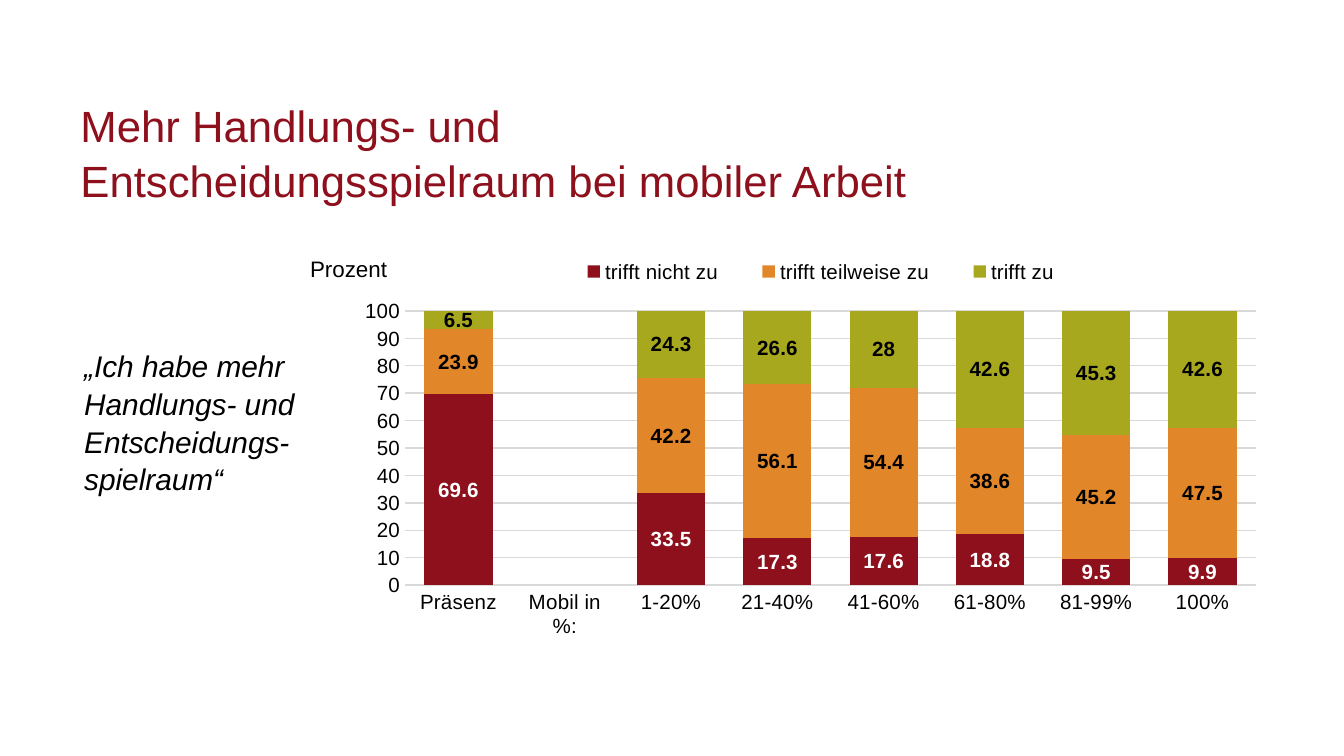
from dataclasses import dataclass

from lxml import etree
from pptx import Presentation
from pptx.chart.data import CategoryChartData
from pptx.dml.color import RGBColor
from pptx.enum.chart import XL_CHART_TYPE, XL_LABEL_POSITION, XL_LEGEND_POSITION, XL_TICK_MARK
from pptx.enum.text import MSO_ANCHOR
from pptx.oxml.ns import qn
from pptx.util import Pt

STACKED = XL_CHART_TYPE.COLUMN_STACKED
CENTER = XL_LABEL_POSITION.CENTER
BOTTOM = XL_LEGEND_POSITION.BOTTOM
NO_TICK = XL_TICK_MARK.NONE
TOP = MSO_ANCHOR.TOP

FONT = "Arial"
CRIMSON = RGBColor(0x8E, 0x10, 0x1C)
ORANGE = RGBColor(0xE2, 0x86, 0x2A)
OLIVE = RGBColor(0xA8, 0xA8, 0x1E)
BLACK = RGBColor(0, 0, 0)
WHITE = RGBColor(0xFF, 0xFF, 0xFF)
GRID_GRAY = RGBColor(0xD9, 0xD9, 0xD9)

CATEGORIES = ["Präsenz", "Mobil in %:", "1-20%", "21-40%", "41-60%", "61-80%", "81-99%", "100%"]


@dataclass
class Label:
    text: str
    left: float
    top: float
    width: float
    height: float
    size: float
    color: RGBColor = BLACK
    italic: bool = False
    line_spacing: float = 1.0


@dataclass
class Answer:
    name: str
    values: list[float | None]
    color: RGBColor
    label_color: RGBColor


LABELS = [
    Label("Mehr Handlungs- und Entscheidungsspielraum bei mobiler Arbeit",
          36, 48.24, 481, 75.6, 23.4, CRIMSON, line_spacing=1.05),
    Label("„Ich habe mehr Handlungs- und Entscheidungs-spielraum“",
          38, 182, 157.7, 77, 16, italic=True, line_spacing=1.05),
    Label("Prozent", 159, 133.2, 82, 23, 12),
]

ANSWERS = [
    Answer("trifft nicht zu", [69.6, None, 33.5, 17.3, 17.6, 18.8, 9.5, 9.9], CRIMSON, WHITE),
    Answer("trifft teilweise zu", [23.9, None, 42.2, 56.1, 54.4, 38.6, 45.2, 47.5], ORANGE, BLACK),
    Answer("trifft zu", [6.5, None, 24.3, 26.6, 28, 42.6, 45.3, 42.6], OLIVE, BLACK),
]


def style_font(font, size: float, color: RGBColor = BLACK) -> None:
    font.name = FONT
    font.size = Pt(size)
    font.color.rgb = color


def add_label(slide, label: Label) -> None:
    shape = slide.shapes.add_textbox(Pt(label.left), Pt(label.top), Pt(label.width), Pt(label.height))
    frame = shape.text_frame
    frame.word_wrap = True
    frame.vertical_anchor = TOP
    paragraph = frame.paragraphs[0]
    paragraph.text = label.text
    paragraph.line_spacing = label.line_spacing
    style_font(paragraph.font, label.size, label.color)
    paragraph.font.italic = label.italic


def make_layout(x: float, y: float, width: float, height: float, inner: bool = False):
    """Return a c:layout element placed in fractions of the chart area."""
    layout = etree.Element(qn("c:layout"))
    manual = etree.SubElement(layout, qn("c:manualLayout"))
    settings = [("layoutTarget", "inner")] if inner else []
    settings += [("xMode", "edge"), ("yMode", "edge"), ("x", x), ("y", y), ("w", width), ("h", height)]
    for tag, value in settings:
        etree.SubElement(manual, qn(f"c:{tag}")).set("val", str(value))
    return layout


def replace_layout(parent, layout, index: int) -> None:
    for old in parent.findall(qn("c:layout")):
        parent.remove(old)
    parent.insert(index, layout)


def style_axes(chart) -> None:
    for axis in (chart.category_axis, chart.value_axis):
        axis.major_tick_mark = axis.minor_tick_mark = NO_TICK
        style_font(axis.tick_labels.font, 11)
    value_axis = chart.value_axis
    value_axis.minimum_scale, value_axis.maximum_scale, value_axis.major_unit = 0, 100, 10
    value_axis.format.line.fill.background()
    for line in (chart.category_axis.format.line, value_axis.major_gridlines.format.line):
        line.color.rgb = GRID_GRAY
        line.width = Pt(0.75)


def style_series(series, answer: Answer) -> None:
    series.format.fill.solid()
    series.format.fill.fore_color.rgb = answer.color
    labels = series.data_labels
    labels.show_value = True
    labels.position = CENTER
    style_font(labels.font, 11, answer.label_color)
    labels.font.bold = True


def add_answer_chart(slide, answers: list[Answer]) -> None:
    data = CategoryChartData()
    data.categories = CATEGORIES
    for answer in answers:
        data.add_series(answer.name, answer.values)
    chart = slide.shapes.add_chart(STACKED, Pt(170.6), Pt(99.4), Pt(517.7), Pt(249), data).chart
    style_font(chart.font, 10)
    chart.has_title = False
    style_axes(chart)

    plot = chart.plots[0]
    plot.gap_width, plot.overlap, plot.vary_by_categories = 56, 100, False
    for series, answer in zip(plot.series, answers):
        style_series(series, answer)

    chart.has_legend = True
    legend = chart.legend
    legend.position = BOTTOM
    legend.include_in_layout = False
    style_font(legend.font, 11)
    legend_position = legend._element.find(qn("c:legendPos"))
    replace_layout(legend._element, make_layout(0.24, 0.15, 0.56, 0.07),
                   legend._element.index(legend_position) + 1)
    plot_area = chart._chartSpace.chart.plotArea
    replace_layout(plot_area, make_layout(0.09, 0.27, 0.88, 0.59, inner=True), 0)


def main() -> None:
    presentation = Presentation()
    presentation.slide_width, presentation.slide_height = Pt(720), Pt(405)
    slide = presentation.slides.add_slide(presentation.slide_layouts[6])
    add_answer_chart(slide, ANSWERS)
    for label in LABELS:
        add_label(slide, label)
    presentation.save("out.pptx")


if __name__ == "__main__":
    main()
